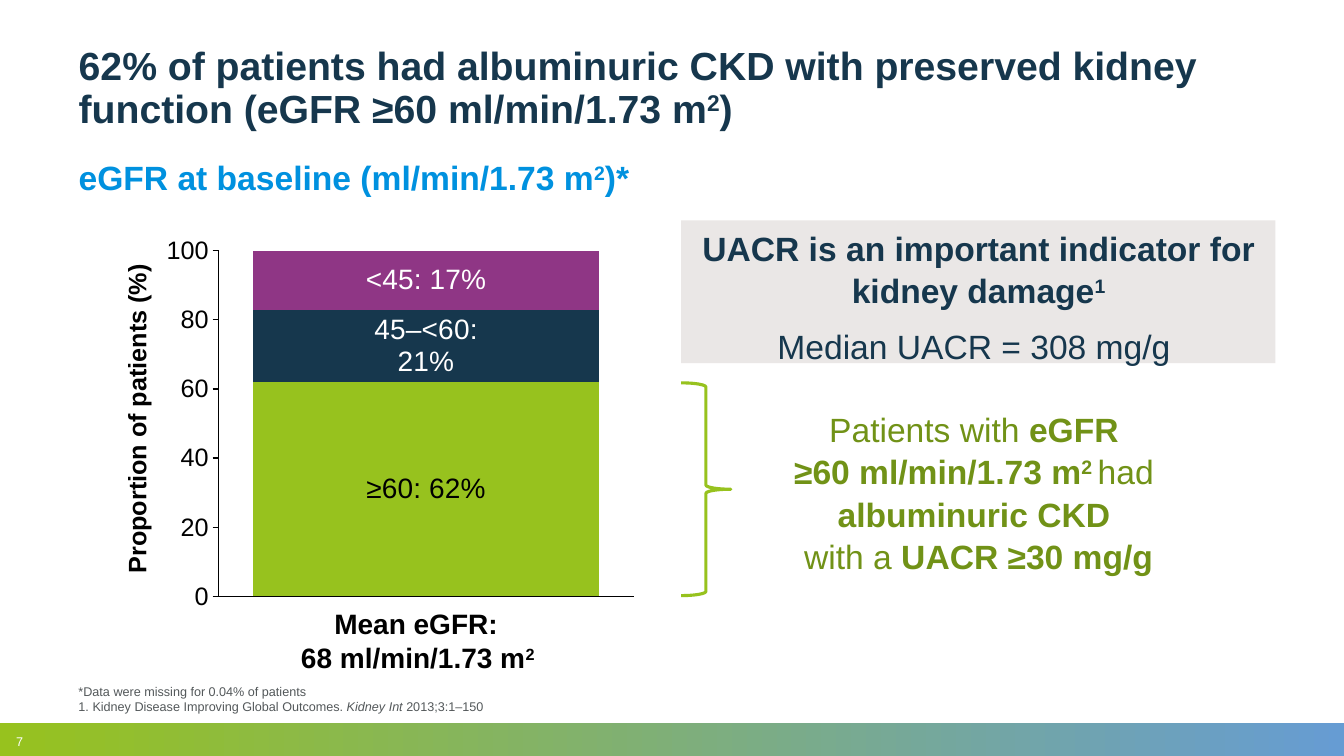
"""Build the slide on baseline eGFR and albuminuric CKD."""
from lxml import etree
from pptx import Presentation
from pptx.chart.data import CategoryChartData
from pptx.dml.color import RGBColor
from pptx.enum.chart import XL_CHART_TYPE, XL_LABEL_POSITION, XL_TICK_LABEL_POSITION, XL_TICK_MARK
from pptx.enum.shapes import MSO_SHAPE
from pptx.enum.text import MSO_ANCHOR, MSO_AUTO_SIZE, PP_ALIGN
from pptx.oxml import parse_xml
from pptx.oxml.ns import nsdecls, qn
from pptx.util import Pt

STACKED = XL_CHART_TYPE.COLUMN_STACKED
LABEL_CENTER = XL_LABEL_POSITION.CENTER
NO_LABELS = XL_TICK_LABEL_POSITION.NONE
TICK_NONE, TICK_OUT = XL_TICK_MARK.NONE, XL_TICK_MARK.OUTSIDE
RECTANGLE, RIGHT_BRACE = MSO_SHAPE.RECTANGLE, MSO_SHAPE.RIGHT_BRACE
TOP, MIDDLE, BOTTOM = MSO_ANCHOR.TOP, MSO_ANCHOR.MIDDLE, MSO_ANCHOR.BOTTOM
NO_AUTOFIT = MSO_AUTO_SIZE.NONE
LEFT, CENTER = PP_ALIGN.LEFT, PP_ALIGN.CENTER

NAVY = RGBColor(0x16, 0x37, 0x4D)
BLUE = RGBColor(0x00, 0x91, 0xDF)
GREEN = RGBColor(0x97, 0xC2, 0x1E)
DARK_GREEN = RGBColor(0x71, 0x92, 0x17)
PURPLE = RGBColor(0x8F, 0x36, 0x85)
SKY = RGBColor(0x66, 0x9C, 0xD3)
PALE_GREY = RGBColor(0xEA, 0xE7, 0xE6)
GREY = RGBColor(0x53, 0x58, 0x5A)
BLACK = RGBColor(0x00, 0x00, 0x00)
WHITE = RGBColor(0xFF, 0xFF, 0xFF)
FONT = "Arial"


def write(paragraph, text, size, color, bold=False, italic=False, superscript=False):
    for position, line in enumerate(text.split("\n")):
        if position:
            paragraph.add_line_break()
        if line:
            run = paragraph.add_run()
            run.text = line
            run.font.name, run.font.size = FONT, Pt(size)
            run.font.bold, run.font.italic = bold, italic
            run.font.color.rgb = color
            if superscript:
                run.font._element.set("baseline", "30000")


def place(shape, left, top, width, height, anchor=TOP):
    shape.left, shape.top = Pt(left), Pt(top)
    shape.width, shape.height = Pt(width), Pt(height)
    frame = shape.text_frame
    frame.word_wrap = True
    frame.auto_size = NO_AUTOFIT
    frame.vertical_anchor = anchor
    return frame


prs = Presentation()
prs.slide_width, prs.slide_height = Pt(960), Pt(540)
slide = prs.slides.add_slide(prs.slide_layouts[3])
shapes = slide.shapes
title, subtitle, findings = slide.placeholders

footer_band = shapes.add_shape(RECTANGLE, Pt(0), Pt(516.5), Pt(960), Pt(23.5))
footer_band.fill.gradient()
footer_band.fill.gradient_angle = 0
for stop, color, position in zip(footer_band.fill.gradient_stops, (GREEN, SKY), (0, 1)):
    stop.color.rgb = color
    stop.position = position
uacr_panel = shapes.add_shape(RECTANGLE, Pt(486.5), Pt(157.5), Pt(424.5), Pt(102))
uacr_panel.fill.solid()
uacr_panel.fill.fore_color.rgb = PALE_GREY
for backdrop in (footer_band, uacr_panel):
    backdrop.line.fill.background()
    backdrop.shadow.inherit = False
    shapes._spTree.remove(backdrop._element)
    shapes._spTree.insert(2, backdrop._element)

headings = (
    (title, (49, 26, 859, 75.5, MIDDLE), 28, NAVY,
     "62% of patients had albuminuric CKD with preserved kidney function (eGFR ≥60 ml/min/1.73 m", ")"),
    (subtitle, (49, 111.5, 859, 36.5, TOP), 24, BLUE, "eGFR at baseline (ml/min/1.73 m", ")*"),
)
for heading, box, size, color, before, after in headings:
    paragraph = place(heading, *box).paragraphs[0]
    paragraph.alignment = LEFT
    paragraph.line_spacing = 0.9
    paragraph.space_before = Pt(0)
    write(paragraph, before, size, color, bold=True)
    write(paragraph, "2", size, color, bold=True, superscript=True)
    write(paragraph, after, size, color, bold=True)

findings_frame = place(findings, 489, 157.5, 420, 311)
indicator = findings_frame.paragraphs[0]
median = findings_frame.add_paragraph()
albuminuric = findings_frame.add_paragraph()
for paragraph, gap in ((indicator, 0), (median, 10), (albuminuric, 29)):
    paragraph.alignment = CENTER
    paragraph.line_spacing = 1.05
    paragraph.space_before = Pt(gap)
for paragraph in (subtitle.text_frame.paragraphs[0], indicator, median, albuminuric):
    properties = paragraph._p.get_or_add_pPr()
    properties.set("marL", "0")
    properties.set("indent", "0")
    etree.SubElement(properties, qn("a:buNone"))
write(indicator, "UACR is an important indicator for kidney damage", 24, NAVY, bold=True)
write(indicator, "1", 24, NAVY, bold=True, superscript=True)
write(median, "Median UACR = 308 mg/g ", 24, NAVY)
write(albuminuric, "Patients with ", 24, DARK_GREEN)
write(albuminuric, "eGFR \n≥60 ml/min/1.73 m", 24, DARK_GREEN, bold=True)
write(albuminuric, "2 ", 24, DARK_GREEN, bold=True, superscript=True)
write(albuminuric, "had \n", 24, DARK_GREEN)
write(albuminuric, "albuminuric CKD \n", 24, DARK_GREEN, bold=True)
write(albuminuric, "with a ", 24, DARK_GREEN)
write(albuminuric, "UACR ≥30 mg/g", 24, DARK_GREEN, bold=True)

egfr_groups = (
    ("≥60: 62%", 62, GREEN, BLACK),
    ("45–<60: 21%", 21, NAVY, WHITE),
    ("<45: 17%", 17, PURPLE, WHITE),
)
egfr_data = CategoryChartData(number_format="#,##0")
egfr_data.categories = ["%"]
for number, (label, share, fill, ink) in enumerate(egfr_groups, 1):
    egfr_data.add_series(f"Series {number}", [share])
chart = shapes.add_chart(STACKED, Pt(49), Pt(157.5), Pt(420), Pt(311), egfr_data).chart
chart.has_legend = False
chart.has_title = False
chart.font.name, chart.font.size, chart.font.color.rgb = FONT, Pt(10), GREY
bars = chart.plots[0]
bars.vary_by_categories = False
bars.gap_width, bars.overlap = 20, 100
for series, (label, share, fill, ink) in zip(bars.series, egfr_groups):
    series.format.fill.solid()
    series.format.fill.fore_color.rgb = fill
    data_label = series.points[0].data_label
    write(data_label.text_frame.paragraphs[0], label, 20, ink)
    data_label.position = LABEL_CENTER

share_axis, group_axis = chart.value_axis, chart.category_axis
share_axis.minimum_scale, share_axis.maximum_scale, share_axis.major_unit = 0, 100, 20
share_axis.has_major_gridlines = False
share_axis.major_tick_mark, group_axis.major_tick_mark = TICK_OUT, TICK_NONE
group_axis.tick_label_position = NO_LABELS
labels_font = share_axis.tick_labels.font
labels_font.name, labels_font.size, labels_font.color.rgb = FONT, Pt(18), BLACK
for axis in (share_axis, group_axis):
    axis.format.line.color.rgb = BLACK
    axis.format.line.width = Pt(0.75)
axis_title = share_axis.axis_title
write(axis_title.text_frame.paragraphs[0], "Proportion of patients (%)", 18, BLACK, bold=True)
axis_title.text_frame._txBody.bodyPr.set("rot", "-5400000")
axis_title.text_frame._txBody.bodyPr.set("vert", "horz")

plot_layout = (
    '<c:layoutTarget val="inner"/><c:xMode val="edge"/><c:yMode val="edge"/>'
    '<c:x val="0.255"/><c:y val="0.07"/><c:w val="0.706"/><c:h val="0.793"/>'
)
title_layout = '<c:xMode val="edge"/><c:yMode val="edge"/><c:x val="0.08"/><c:y val="0.09"/>'
plot_area = chart._chartSpace.chart.plotArea
for parent, index, layout in ((plot_area, 0, plot_layout), (axis_title._element, 1, title_layout)):
    for default_layout in parent.findall(qn("c:layout")):
        parent.remove(default_layout)
    parent.insert(index, parse_xml(
        f'<c:layout {nsdecls("c")}><c:manualLayout>{layout}</c:manualLayout></c:layout>'))

page_frame = place(shapes.add_textbox(0, 0, 0, 0), 11.5, 520.5, 29.5, 18, BOTTOM)
page_frame.margin_left = Pt(0)
write(page_frame.paragraphs[0], "7", 9, WHITE)

notes_frame = place(shapes.add_textbox(0, 0, 0, 0), 49, 474, 859, 39.5, BOTTOM)
write(notes_frame.paragraphs[0], "*Data were missing for 0.04% of patients", 9, GREY)
citation = notes_frame.add_paragraph()
write(citation, "1. Kidney Disease Improving Global Outcomes. ", 9, GREY)
write(citation, "Kidney Int ", 9, GREY, italic=True)
write(citation, "2013;3:1–150", 9, GREY)

mean_egfr = place(shapes.add_textbox(0, 0, 0, 0), 179, 430, 242, 55.5).paragraphs[0]
mean_egfr.alignment = CENTER
write(mean_egfr, "Mean eGFR: \n68 ml/min/1.73 m", 20, BLACK, bold=True)
write(mean_egfr, "2 ", 20, BLACK, bold=True, superscript=True)

brace = shapes.add_shape(RIGHT_BRACE, Pt(486.5), Pt(273.5), Pt(35.5), Pt(152))
brace.fill.background()
brace.line.color.rgb = GREEN
brace.line.width = Pt(2.25)
brace.shadow.inherit = False

prs.save("out.pptx")
